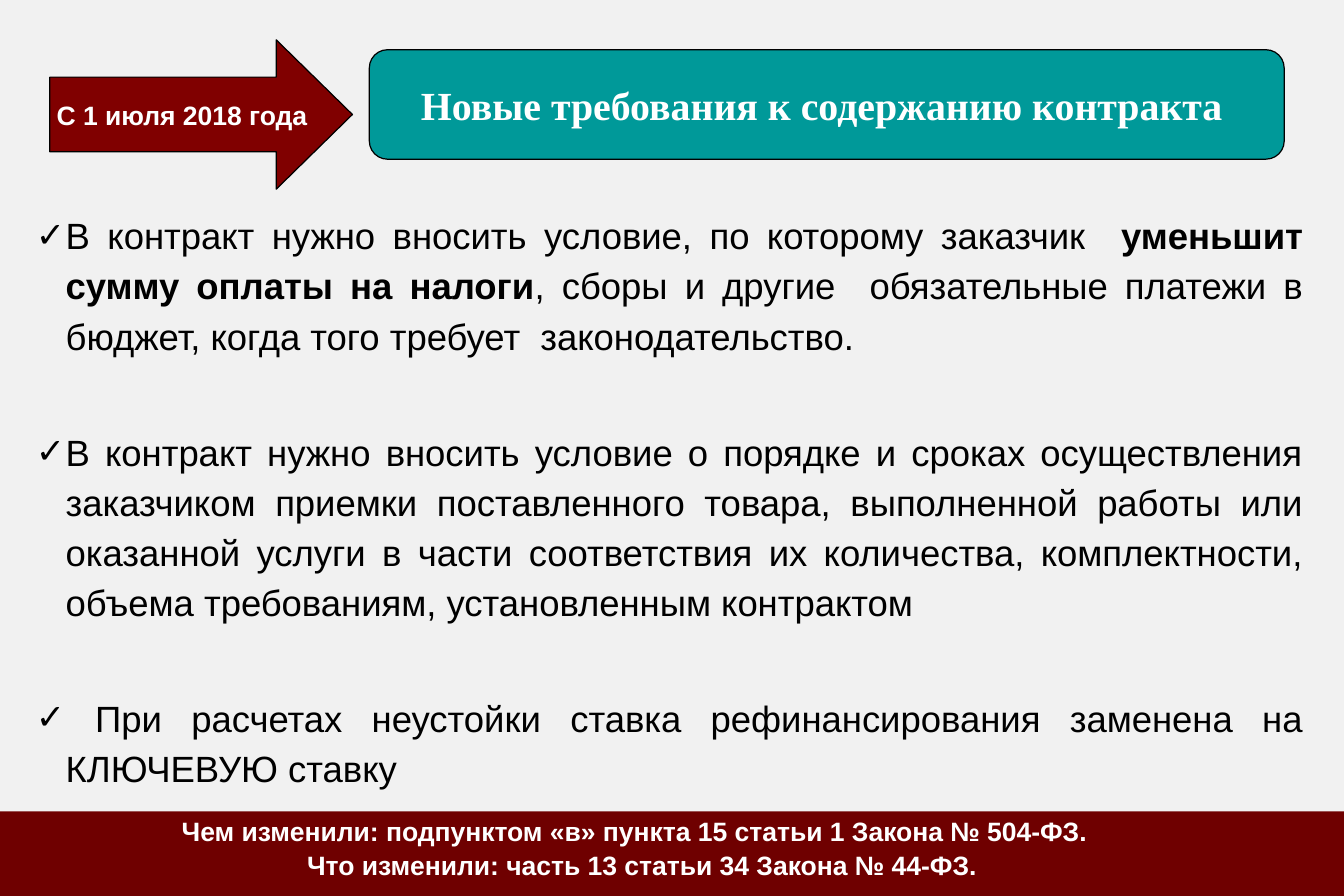
from lxml import etree
from pptx import Presentation
from pptx.dml.color import RGBColor
from pptx.enum.shapes import MSO_SHAPE
from pptx.enum.text import MSO_ANCHOR, MSO_AUTO_SIZE, PP_ALIGN
from pptx.oxml.ns import qn
from pptx.util import Pt

PX = 7620  # 120 px to the inch
RECT, ROUND = MSO_SHAPE.RECTANGLE, MSO_SHAPE.ROUNDED_RECTANGLE
ARROW = MSO_SHAPE.RIGHT_ARROW
CENTER, JUSTIFY = PP_ALIGN.CENTER, PP_ALIGN.JUSTIFY
TOP, MIDDLE = MSO_ANCHOR.TOP, MSO_ANCHOR.MIDDLE
NO_FIT = MSO_AUTO_SIZE.NONE


def block(kind, x, y, w, h, color, edge=None):
    """Add a filled shape, with a thin outline if edge is given."""
    shape = slide.shapes.add_shape(kind, x * PX, y * PX, w * PX, h * PX)
    shape.shadow.inherit = False
    shape.fill.solid()
    shape.fill.fore_color.rgb = RGBColor.from_string(color)
    if edge:
        shape.line.color.rgb = RGBColor.from_string(edge)
        shape.line.width = Pt(0.75)
    else:
        shape.line.fill.background()
    return shape


def style(para, size, color, align, font="Arial", bold=None):
    para.alignment = align
    para.font.name = font
    para.font.size = Pt(size)
    para.font.bold = bold
    para.font.color.rgb = RGBColor.from_string(color)


prs = Presentation()
prs.slide_width, prs.slide_height = 1350 * PX, 900 * PX
slide = prs.slides.add_slide(prs.slide_layouts[1])
slide.background.fill.solid()
slide.background.fill.fore_color.rgb = RGBColor.from_string("F1F1F1")
title, body = slide.placeholders

# Terms of the contract
body.left, body.top, body.width, body.height = 35 * PX, 200 * PX, 1274 * PX, 594 * PX
frame = body.text_frame
frame.auto_size = NO_FIT
frame.vertical_anchor = TOP
frame.margin_left = frame.margin_right = frame.margin_bottom = 0
frame.margin_top = 8 * PX
terms = [
    [("В контракт нужно вносить условие, по которому заказчик  ", False),
     ("уменьшит сумму оплаты на налоги", True),
     (", сборы и другие  обязательные платежи в бюджет, "
      "когда того требует  законодательство.", False)],
    [("В контракт нужно вносить условие о порядке и сроках осуществления "
      "заказчиком приемки поставленного товара, выполненной работы или "
      "оказанной услуги в части соответствия их количества, комплектности, "
      "объема требованиям, установленным контрактом", False)],
    [(" При расчетах неустойки ставка рефинансирования заменена на "
      "КЛЮЧЕВУЮ ставку", False)],
]
for i, term in enumerate(terms):
    para = frame.add_paragraph() if i else frame.paragraphs[0]
    style(para, 22, "000000", JUSTIFY)
    para.line_spacing = Pt(30.2)
    para.space_before = Pt(39.8 if i else 4.8)
    for text, bold in term:
        run = para.add_run()
        run.text = text
        if bold:
            run.font.bold = True
    props = para._p.get_or_add_pPr()
    props.set("marL", str(31 * PX))
    props.set("indent", str(-30 * PX))
    for tag, key, value in [("a:buSzPct", "val", "96000"),
                            ("a:buFont", "typeface", "Arial"),
                            ("a:buChar", "char", "✓")]:
        etree.SubElement(props, qn(tag)).set(key, value)

# Footer with the legal basis
block(RECT, 0, 815, 1350, 85, "6F0000")
note = slide.shapes.add_textbox(125 * PX, 818 * PX, 1040 * PX, 67 * PX).text_frame
note.word_wrap = True
note.margin_left = note.margin_right = note.margin_bottom = 0
note.margin_top = PX
laws = [("Чем изменили: подпунктом «в» пункта 15 статьи 1 Закона № 504-ФЗ.", 15),
        ("Что изменили: часть 13 статьи 34 Закона № 44-ФЗ.", 0)]
for i, (text, right) in enumerate(laws):
    para = note.add_paragraph() if i else note.paragraphs[0]
    para.text = text
    style(para, 16, "FFFFFF", CENTER, bold=True)
    para.space_before = Pt(1)
    para._p.get_or_add_pPr().set("marR", str(right * PX))

# Heading on its panel
panel = block(ROUND, 371, 50, 919, 110, "009999", "000000")
title.left, title.top, title.width, title.height = 366 * PX, 50 * PX, 919 * PX, 110 * PX
title.text_frame.text = "Новые требования к содержанию контракта"
title.text_frame.auto_size = NO_FIT
title.text_frame.vertical_anchor = MIDDLE
style(title.text_frame.paragraphs[0], 24, "FFFFFF", CENTER, "Times New Roman", True)
tree = slide.shapes._spTree
tree.remove(title._element)
tree.append(title._element)

# Start date
arrow = block(ARROW, 50, 40, 304, 150, "800000", "000000")
arrow.adjustments[1] = 0.51
date = arrow.text_frame
date.text = "С 1 июля 2018 года"
date.word_wrap = False
date.vertical_anchor = MIDDLE
style(date.paragraphs[0], 16, "FFFFFF", CENTER, bold=True)

prs.save("out.pptx")
